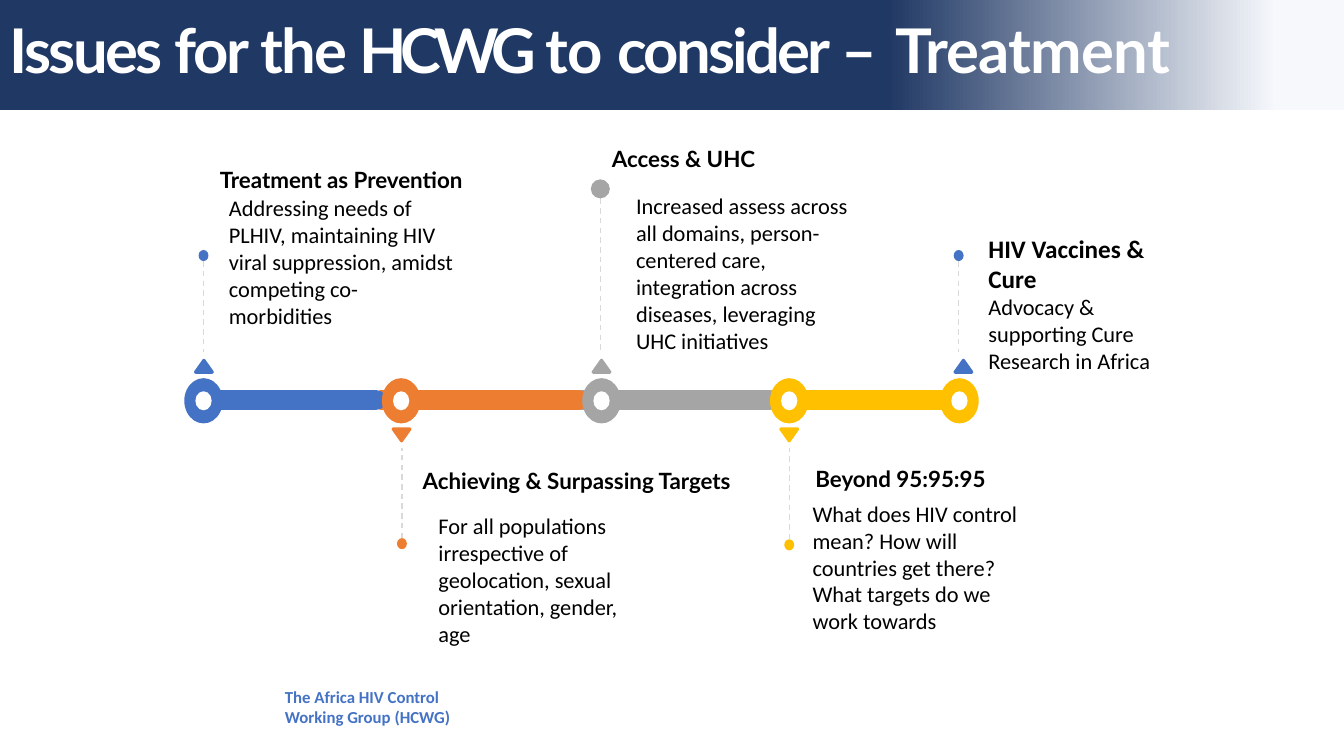
from pptx import Presentation
from pptx.dml.color import RGBColor
from pptx.enum.dml import MSO_LINE
from pptx.enum.shapes import MSO_CONNECTOR, MSO_SHAPE
from pptx.enum.text import MSO_ANCHOR, MSO_AUTO_SIZE
from pptx.oxml import parse_xml
from pptx.oxml.ns import nsdecls
from pptx.util import Cm, Pt

STRAIGHT = MSO_CONNECTOR.STRAIGHT
OVAL, RECT, ROUNDED = MSO_SHAPE.OVAL, MSO_SHAPE.RECTANGLE, MSO_SHAPE.ROUNDED_RECTANGLE
DASH = MSO_LINE.DASH
MIDDLE = MSO_ANCHOR.MIDDLE
GROW = MSO_AUTO_SIZE.SHAPE_TO_FIT_TEXT

BLUE, ORANGE, GRAY, YELLOW = "4472C4", "ED7D31", "A5A5A5", "FFC000"
WHITE, BLACK, NAVY, PALE, STEM = "FFFFFF", "000000", "203864", "F6F8FC", "D9D9D9"
HEAD_FONT, BODY_FONT = "Lato", "Calibri"

AXIS_Y = 10.1
ARROW_W, ARROW_H = 0.5, 0.38
# Left half of an upward arrowhead with soft corners, as shares of its size
ARROW_HALF = [(0.08, 1), (0.02, 0.95), (0, 0.88), (0.03, 0.8), (0.44, 0.04)]


def rgb(hex_code):
    return RGBColor.from_string(hex_code)


def add_run(paragraph, text, size=16, font=BODY_FONT, color=BLACK, bold=False, spacing=None):
    run = paragraph.add_run()
    run.text = text
    run.font.size, run.font.name, run.font.bold = Pt(size), font, bold
    run.font.color.rgb = rgb(color)
    if spacing is not None:
        run.font._element.set("spc", str(round(spacing * 100)))


class TimelineSlide:
    def __init__(self, presentation):
        self.shapes = presentation.slides.add_slide(presentation.slide_layouts[6]).shapes

    def paint(self, shape, color):
        shape.shadow.inherit = False
        shape.fill.solid()
        shape.fill.fore_color.rgb = rgb(color)
        shape.line.fill.background()

    def banner(self, width, height):
        band = self.shapes.add_shape(RECT, 0, 0, Cm(width), Cm(height))
        self.paint(band, NAVY)
        band.fill.gradient()
        band.fill.gradient_angle = 0
        for stop, color, place in zip(band.fill.gradient_stops, (NAVY, PALE), (0.66, 0.95)):
            stop.color.rgb = rgb(color)
            stop.position = place

    def bar(self, left, width, color):
        bar = self.shapes.add_shape(ROUNDED, Cm(left), Cm(9.83), Cm(width), Cm(0.5))
        bar.adjustments[0] = 0.5
        self.paint(bar, color)

    def oval(self, center_x, center_y, width, height, color):
        oval = self.shapes.add_shape(OVAL, Cm(center_x - width / 2), Cm(center_y - height / 2),
                                     Cm(width), Cm(height))
        self.paint(oval, color)

    def ring(self, center_x, color):
        self.oval(center_x, AXIS_Y, 0.97, 1.14, color)
        self.oval(center_x, AXIS_Y, 0.41, 0.48, WHITE)

    def arrowhead(self, center_x, color, up):
        right_half = [(1 - x, y) for x, y in reversed(ARROW_HALF)]
        outline = ARROW_HALF + [(0.5, 0)] + right_half
        top = 9.04 if up else 10.77
        points = [(Cm(center_x + (x - 0.5) * ARROW_W),
                   Cm(top + (y if up else 1 - y) * ARROW_H)) for x, y in outline]
        builder = self.shapes.build_freeform(*points[0])
        builder.add_line_segments(points[1:], close=True)
        self.paint(builder.convert_to_shape(), color)

    def stem(self, x, dot_y, dot_w, dot_h, color, up):
        start = dot_y + (dot_h / 2 if up else -dot_h / 2)
        line = self.shapes.add_connector(STRAIGHT, Cm(x), Cm(start),
                                         Cm(x), Cm(8.88 if up else 11.28))
        line.line.color.rgb = rgb(STEM)
        line.line.width = Pt(1)
        line.line.dash_style = DASH
        line._element.spPr.append(parse_xml(f"<a:effectLst {nsdecls('a')}/>"))
        self.oval(x, dot_y, dot_w, dot_h, color)

    def text(self, box, paragraphs, wrap=True, inset=(0.25, 0.13), anchor=None, line_spacing=None):
        """Each paragraph is a list of (text, format) runs."""
        frame = self.shapes.add_textbox(*map(Cm, box)).text_frame
        frame.word_wrap = wrap
        frame.margin_left = frame.margin_right = Cm(inset[0])
        frame.margin_top = frame.margin_bottom = Cm(inset[1])
        if anchor is None:
            frame.auto_size = GROW
        else:
            frame.vertical_anchor = anchor
        for index, runs in enumerate(paragraphs):
            paragraph = frame.add_paragraph() if index else frame.paragraphs[0]
            if line_spacing:
                paragraph.line_spacing = line_spacing
            for text, style in runs:
                add_run(paragraph, text, **style)


def main():
    presentation = Presentation()
    presentation.slide_width, presentation.slide_height = Cm(33.87), Cm(19.05)
    slide = TimelineSlide(presentation)

    # Title band
    slide.banner(33.87, 2.78)
    title = [("Issues ", -2), ("for ", -1.7), ("the ", -1.5), ("HCWG ", -4.8), ("to ", -0.2),
             ("consider ", -2), ("– ", 1.1), ("Treatment", -0.6)]
    title_style = dict(size=44, font=HEAD_FONT, color=WHITE, bold=True)
    slide.text((0, 0.08, 33.5, 2.54),
               [[(word, dict(title_style, spacing=gap)) for word, gap in title]],
               anchor=MIDDLE, line_spacing=0.9)

    # Timeline bars, last one at the back
    for left, width, color in [(18.36, 5.92, YELLOW), (13.72, 5.92, GRAY),
                               (9.35, 5.49, ORANGE), (4.75, 4.98, BLUE)]:
        slide.bar(left, width, color)

    # Milestones: ring x, ring colour, arrow x, stem x, dot y, dot size, mark colour, upward
    small, large = (0.25, 0.28), (0.48, 0.48)
    milestones = [
        (5.13, BLUE, 5.14, 5.13, 6.44, small, BLUE, True),
        (10.11, ORANGE, 10.12, 10.13, 13.7, small, ORANGE, False),
        (15.16, GRAY, 15.16, 15.13, 4.76, large, GRAY, True),
        (19.89, YELLOW, 19.89, 19.89, 13.73, small, YELLOW, False),
        (24.18, YELLOW, 24.28, 24.16, 6.44, small, BLUE, True),
    ]
    for ring_x, ring_color, arrow_x, stem_x, dot_y, dot, color, up in milestones:
        slide.ring(ring_x, ring_color)
        slide.arrowhead(arrow_x, color, up)
        slide.stem(stem_x, dot_y, *dot, color, up)

    # Milestone headings
    wide_inset = (0.41, 0.2)
    for box, heading in [
        ((5.13, 3.99, 7.11, 1.09), "Treatment as Prevention"),
        ((15.01, 3.45, 4.5, 1.09), "Access & UHC"),
        ((10.24, 11.56, 8.81, 1.09), "Achieving & Surpassing Targets"),
        ((20.14, 11.53, 5.18, 1.09), "Beyond 95:95:95"),
    ]:
        slide.text(box, [[(heading, dict(font=HEAD_FONT, bold=True))]],
                   wrap=False, inset=wide_inset)

    # Milestone descriptions
    for box, description in [
        ((5.36, 4.7, 6.53, 3.84), "Addressing needs of PLHIV, maintaining HIV viral suppression, "
                                  "amidst competing co-morbidities"),
        ((15.62, 4.65, 6.3, 4.52), "Increased assess across all domains, person-centered care, "
                                   "integration across diseases, leveraging UHC initiatives"),
        ((20.07, 12.4, 6.12, 3.84), "What does HIV control mean? How will countries get there? "
                                    "What targets do we work towards"),
    ]:
        slide.text(box, [[(description, {})]], inset=wide_inset)
    slide.text((10.8, 12.78, 5.36, 3.68),
               [[("For all populations irrespective of geolocation, sexual orientation, "
                  "gender, age", {})]])
    slide.text((24.66, 5.74, 4.62, 3.84),
               [[("HIV Vaccines & Cure", dict(size=18, bold=True))],
                [("Advocacy & supporting Cure Research in Africa", {})]])

    # Footer
    footer_style = dict(size=12, color=BLUE, bold=True)
    slide.text((6.93, 17.17, 9.19, 1.27),
               [[(line, footer_style)] for line in ("The Africa HIV Control",
                                                    "Working Group (HCWG)")])

    presentation.save("out.pptx")


if __name__ == "__main__":
    main()
